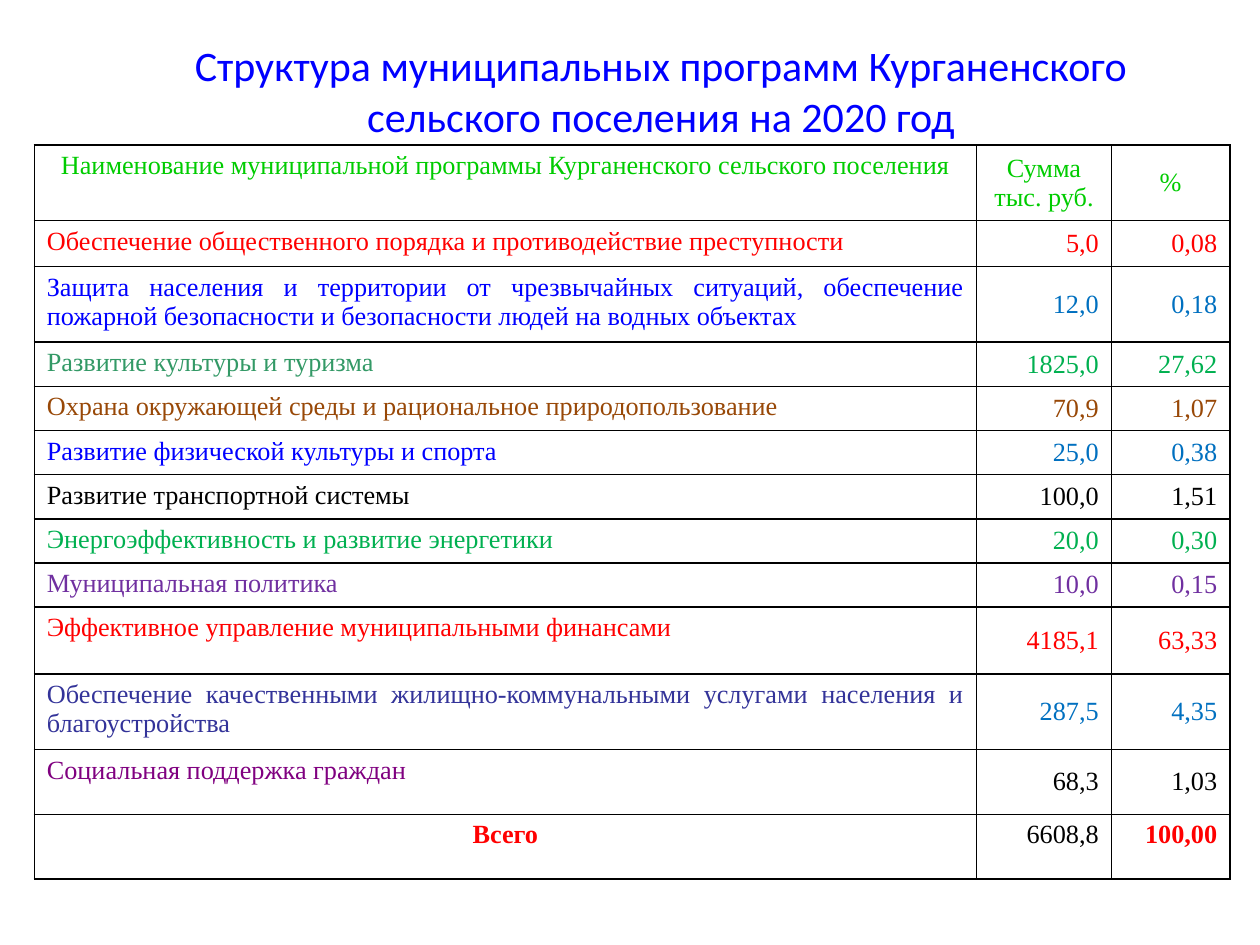
"""Build the slide with the structure of municipal programmes for 2020."""
from lxml.etree import SubElement
from pptx import Presentation
from pptx.dml.color import RGBColor
from pptx.enum.text import MSO_ANCHOR, PP_ALIGN
from pptx.oxml.ns import qn
from pptx.util import Pt

WHITE = RGBColor(0xFF, 0xFF, 0xFF)
BLACK = RGBColor(0x00, 0x00, 0x00)
BLUE = RGBColor(0x00, 0x00, 0xFF)
LIME = RGBColor(0x00, 0xCC, 0x00)
RED = RGBColor(0xFF, 0x00, 0x00)
AZURE = RGBColor(0x00, 0x70, 0xC0)
SEA_GREEN = RGBColor(0x33, 0x99, 0x66)
GREEN = RGBColor(0x00, 0xB0, 0x50)
BROWN = RGBColor(0x98, 0x48, 0x07)
VIOLET = RGBColor(0x70, 0x30, 0xA0)
INDIGO = RGBColor(0x33, 0x33, 0x99)
PURPLE = RGBColor(0x80, 0x00, 0x80)

TITLE = "Структура муниципальных программ Курганенского сельского поселения на 2020 год"
HEADINGS = ("Наименование муниципальной программы Курганенского сельского поселения",
            "Сумма тыс. руб.", "%")
PROGRAMMES = [
    ("Обеспечение общественного порядка и противодействие преступности",
     "5,0", "0,08", RED, RED, 26.2),
    ("Защита населения и территории от чрезвычайных ситуаций, обеспечение "
     "пожарной безопасности и безопасности людей на водных объектах",
     "12,0", "0,18", BLUE, AZURE, 40),
    ("Развитие культуры и туризма", "1825,0", "27,62", SEA_GREEN, GREEN, 23.8),
    ("Охрана окружающей среды и рациональное природопользование",
     "70,9", "1,07", BROWN, BROWN, 23.8),
    ("Развитие физической культуры и спорта", "25,0", "0,38", BLUE, AZURE, 23.8),
    ("Развитие транспортной системы", "100,0", "1,51", BLACK, BLACK, 23.8),
    ("Энергоэффективность и развитие энергетики", "20,0", "0,30", GREEN, GREEN, 23.8),
    ("Муниципальная политика", "10,0", "0,15", VIOLET, VIOLET, 23.8),
    ("Эффективное управление муниципальными финансами",
     "4185,1", "63,33", RED, RED, 38.2),
    ("Обеспечение качественными жилищно-коммунальными услугами населения и благоустройства",
     "287,5", "4,35", INDIGO, AZURE, 40),
    ("Социальная поддержка граждан", "68,3", "1,03", PURPLE, BLACK, 37),
]
TOTAL = (("Всего", RED, True), ("6608,8", BLACK, False), ("100,00", RED, True))
COLUMN_WIDTHS = (538.5, 77, 67.7)
HEADING_HEIGHT = 40
TOTAL_HEIGHT = 37


def write(frame, text, font_name, size, color, align, bold=False):
    frame.text = text
    para = frame.paragraphs[0]
    para.alignment = align
    font = para.runs[0].font
    font.name, font.size, font.bold = font_name, Pt(size), bold
    font.color.rgb = color


def add_borders(cell):
    properties = cell._tc.get_or_add_tcPr()
    for position, side in enumerate(("lnL", "lnR", "lnT", "lnB")):
        line = SubElement(properties, qn(f"a:{side}"), w=str(Pt(1)))
        fill = SubElement(line, qn("a:solidFill"))
        SubElement(fill, qn("a:srgbClr"), val=str(BLACK))
        properties.insert(position, line)


def fill_cell(cell, text, color, align, anchor, bold=False):
    write(cell.text_frame, text, "Times New Roman", 15, color, align, bold)
    cell.vertical_anchor = anchor
    cell.fill.solid()
    cell.fill.fore_color.rgb = WHITE
    add_borders(cell)


def table_rows():
    top, middle = MSO_ANCHOR.TOP, MSO_ANCHOR.MIDDLE
    center, right = PP_ALIGN.CENTER, PP_ALIGN.RIGHT
    anchors = (top, middle, middle)
    yield HEADING_HEIGHT, [(text, LIME, center, anchor)
                           for text, anchor in zip(HEADINGS, anchors)]
    for name, amount, share, name_color, value_color, height in PROGRAMMES:
        yield height, [(name, name_color, PP_ALIGN.JUSTIFY, top),
                       (amount, value_color, right, middle),
                       (share, value_color, right, middle)]
    yield TOTAL_HEIGHT, [(text, color, align, top, bold) for (text, color, bold), align
                         in zip(TOTAL, (center, right, right))]


def main():
    deck = Presentation()
    deck.slide_width, deck.slide_height = Pt(720), Pt(540)
    page = deck.slides.add_slide(deck.slide_layouts[6])

    title = page.shapes.add_textbox(Pt(72), Pt(20.2), Pt(611.3), Pt(62.6)).text_frame
    title.word_wrap = True
    title.vertical_anchor = MSO_ANCHOR.MIDDLE
    write(title, TITLE, "Calibri", 24, BLUE, PP_ALIGN.CENTER)

    rows = list(table_rows())
    table = page.shapes.add_table(
        len(rows), len(COLUMN_WIDTHS), Pt(19.6), Pt(82.9),
        Pt(sum(COLUMN_WIDTHS)), Pt(sum(height for height, _ in rows))).table
    for column, width in zip(table.columns, COLUMN_WIDTHS):
        column.width = Pt(width)
    for row, (height, contents) in zip(table.rows, rows):
        row.height = Pt(height)
        for cell, content in zip(row.cells, contents):
            fill_cell(cell, *content)

    deck.save("out.pptx")


if __name__ == "__main__":
    main()
